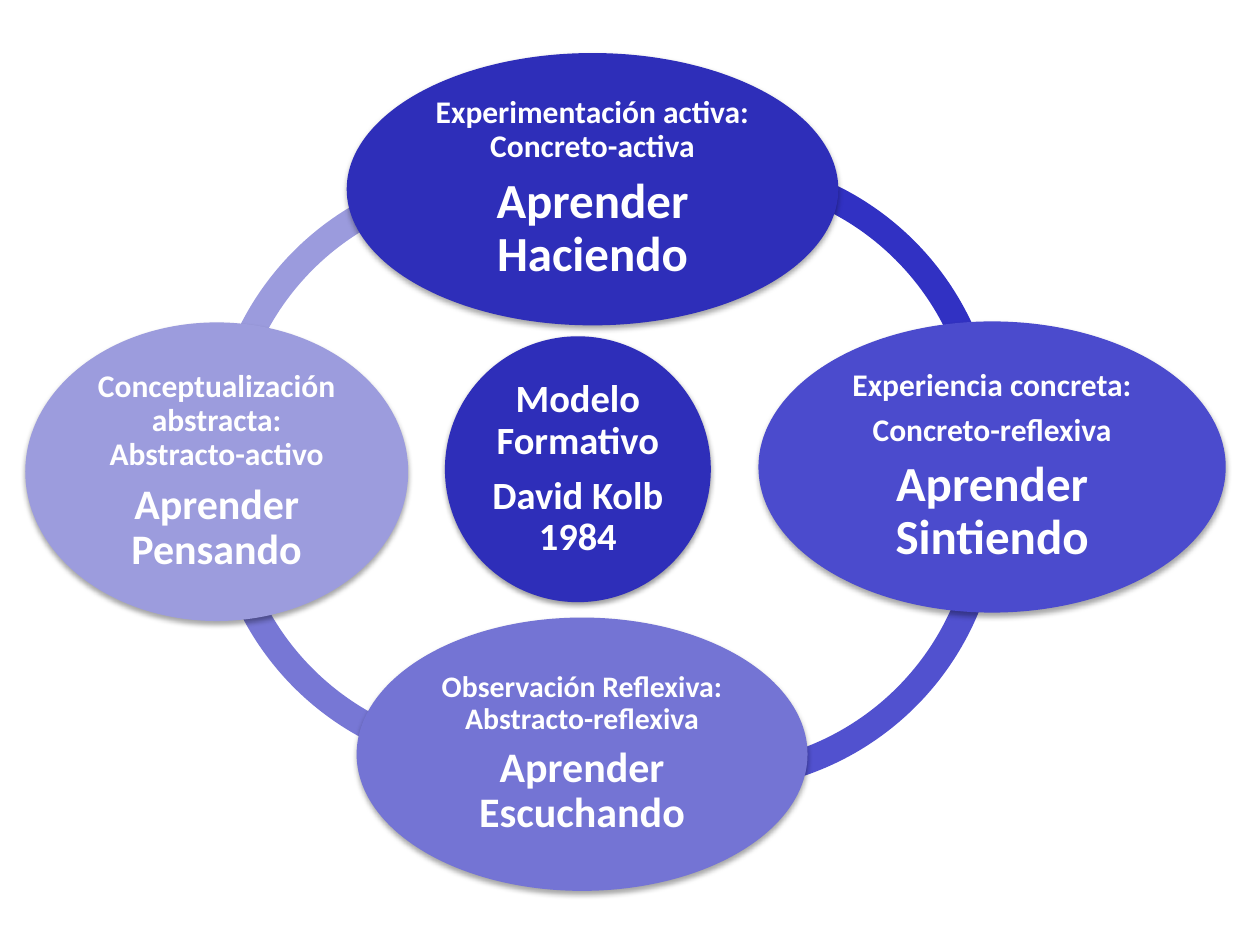
from lxml import etree
from pptx import Presentation
from pptx import util as u
from pptx.dml.color import RGBColor
from pptx.enum import shapes, text
from pptx.oxml.ns import qn

COLOURS = {
    "white": "FFFFFF", "black": "000000",
    "doing": "2E2EB9", "feeling": "4B4BCD", "listening": "7474D4", "thinking": "9C9CDD",
    "arc_doing": "3131C3", "arc_feeling": "5151CF",
    "arc_listening": "7777D5", "arc_thinking": "9B9BDD",
}


def add_filled(page, kind, frame, colour):
    shape = page.shapes.add_shape(kind, *[u.Cm(length) for length in frame])
    shape.shadow.inherit = False
    shape.fill.solid()
    shape.fill.fore_color.rgb = RGBColor.from_string(COLOURS[colour])
    shape.line.fill.background()
    return shape


def add_soft_shadow(shape, distance, opacity):
    effects = shape.element.spPr.find(qn("a:effectLst"))
    shadow = etree.SubElement(effects, qn("a:outerShdw"), blurRad=str(u.Pt(3.1)),
                              dist=str(u.Pt(distance)), dir="5400000", rotWithShape="0")
    colour = etree.SubElement(shadow, qn("a:srgbClr"), val=COLOURS["black"])
    etree.SubElement(colour, qn("a:alpha"), val=str(opacity * 1000))


deck = Presentation()
deck.slide_width, deck.slide_height = u.Cm(25.4), u.Cm(19.05)
page = deck.slides.add_slide(deck.slide_layouts[6])

# Ring of arcs: left, top, start angle, end angle (degrees), colour
ARC_SIZE = 11.66
arcs = [
    (4.22, 3.35, 176.76, 289.35, "arc_thinking"),
    (4.22, 3.91, 72.89, 182.54, "arc_listening"),
    (8.51, 4.29, 352.6, 117.2, "arc_feeling"),
    (8.48, 3.15, 245.48, 4.13, "arc_doing"),
]
for left, top, start, end, colour in arcs:
    arc = add_filled(page, shapes.MSO_SHAPE.BLOCK_ARC, (left, top, ARC_SIZE, ARC_SIZE), colour)
    for index, value in enumerate((start * 0.6, end * 0.6, 0.046)):
        arc.adjustments[index] = value

# Centre and four learning stages: frame, colour, shadow, (wording, size) lines
stages = [
    ((8.97, 6.78, 5.36, 5.36), "doing", (1.6, 38),
     [("Modelo Formativo", 22), ("David Kolb 1984", 22)]),
    ((6.99, 1.07, 9.91, 5.49), "doing", (1.8, 35),
     [("Experimentación activa: Concreto-activa", 18), ("Aprender Haciendo", 28)]),
    ((15.29, 6.48, 9.42, 5.87), "feeling", (1.8, 35),
     [("Experiencia concreta:", 18), ("Concreto-reflexiva", 18), ("Aprender Sintiendo", 28)]),
    ((7.19, 12.45, 9.09, 5.51), "listening", (1.8, 35),
     [("Observación Reflexiva: Abstracto-reflexiva", 17), ("Aprender Escuchando", 24)]),
    ((0.51, 6.5, 7.72, 6.02), "thinking", (1.8, 35),
     [("Conceptualización abstracta: Abstracto-activo", 18), ("Aprender Pensando", 24)]),
]
for frame, colour, shadow, lines in stages:
    oval = add_filled(page, shapes.MSO_SHAPE.OVAL, frame, colour)
    add_soft_shadow(oval, *shadow)
    box = oval.text_frame
    box.word_wrap = True
    box.vertical_anchor = text.MSO_ANCHOR.MIDDLE
    box.margin_left = box.margin_right = box.margin_top = box.margin_bottom = u.Cm(0.07)
    for index, (wording, size) in enumerate(lines):
        para = box.add_paragraph() if index else box.paragraphs[0]
        para.text = wording
        para.alignment = text.PP_ALIGN.CENTER
        para.line_spacing = 0.9
        para.space_after = u.Pt(round(size * 0.35, 1))
        para.font.name = "Calibri"
        para.font.size = u.Pt(size)
        para.font.bold = True
        para.font.color.rgb = RGBColor.from_string(COLOURS["white"])

deck.save("out.pptx")
